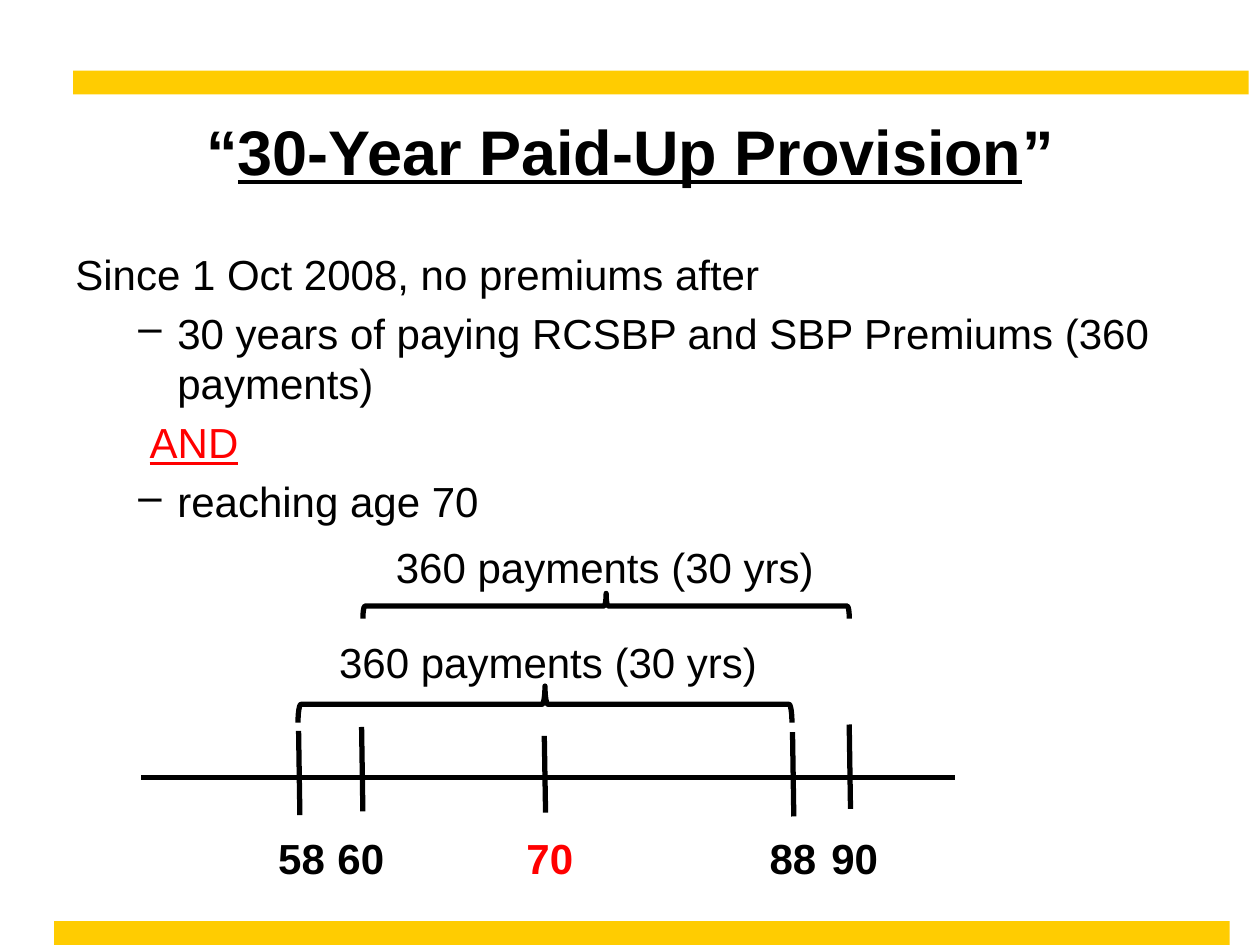
from lxml.etree import SubElement
from pptx import Presentation
from pptx.dml.color import RGBColor
from pptx.enum.shapes import MSO_CONNECTOR as Connector, MSO_SHAPE as Shape
from pptx.enum.text import MSO_ANCHOR as Anchor, PP_ALIGN as Align
from pptx.oxml.ns import qn
from pptx.util import Inches, Pt

COLORS = {"text": "000000", "accent": "FF0000", "bar": "FFCC01"}


class SlideBuilder:
    """Draws styled elements on the current slide."""

    def __init__(self, slide):
        self.slide = slide
        self.font_name = "Arial"
        self.line_width = Pt(3)

    def color(self, key):
        return RGBColor.from_string(COLORS[key])

    def bar(self, left, top):
        bar = self.slide.shapes.add_shape(
            Shape.RECTANGLE, Inches(left), Inches(top), Inches(9.33), Inches(0.19))
        bar.shadow.inherit = False
        bar.fill.solid()
        bar.fill.fore_color.rgb = self.color("bar")
        bar.line.fill.background()

    def box(self, left, top, width, height, wrap=True):
        frame = self.slide.shapes.add_textbox(
            Inches(left), Inches(top), Inches(width), Inches(height)).text_frame
        frame.word_wrap = wrap
        return frame

    def style(self, paragraph, size=24, color="text", bold=False, underline=None):
        font = paragraph.font
        font.name, font.size, font.bold = self.font_name, Pt(size), bold
        font.underline = underline
        font.color.rgb = self.color(color)

    def title(self, opening, underlined, closing):
        frame = self.box(0.5, 0.75, 9, 0.88)
        frame.vertical_anchor = Anchor.MIDDLE
        heading = frame.paragraphs[0]
        heading.alignment = Align.CENTER
        for text in (opening, underlined, closing):
            run = heading.add_run()
            run.text = text
            run.font.underline = text == underlined
        self.style(heading, size=36, bold=True)

    def body(self, items):
        frame = self.box(0.5, 1.92, 9, 4.91)
        for index, (text, margin, indent, bullet, look) in enumerate(items):
            item = frame.add_paragraph() if index else frame.paragraphs[0]
            item.text = text
            if index:
                item.level = 1
                item.space_before = Pt(5)
            properties = item._p.get_or_add_pPr()
            properties.set("marL", str(Inches(margin)))
            properties.set("indent", str(Inches(indent)))
            if bullet:
                SubElement(properties, qn("a:buChar")).set("char", bullet)
            else:
                SubElement(properties, qn("a:buNone"))
            self.style(item, **look)

    def label(self, text, left, top, width, align=Align.LEFT, **look):
        label = self.box(left, top, width, 0.5, wrap=False).paragraphs[0]
        label.text = text
        label.alignment = align
        self.style(label, **look)

    def line(self, x1, y1, x2, y2):
        line = self.slide.shapes.add_connector(
            Connector.STRAIGHT, Inches(x1), Inches(y1), Inches(x2), Inches(y2))
        line.line.color.rgb = self.color("text")
        line.line.width = self.line_width
        SubElement(line._element.spPr, qn("a:effectLst"))

    def brace(self, left, top, width, height):
        brace = self.slide.shapes.add_shape(
            Shape.LEFT_BRACE, Inches(left), Inches(top), Inches(width), Inches(height))
        brace.rotation = 90
        brace.adjustments[0] = 0.08
        brace.shadow.inherit = False
        brace.fill.background()
        brace.line.color.rgb = self.color("text")
        brace.line.width = self.line_width


def main():
    deck = Presentation()
    deck.slide_width, deck.slide_height = Inches(10), Inches(7.5)
    page = SlideBuilder(deck.slides.add_slide(deck.slide_layouts[6]))

    page.bar(0.58, 0.56)
    page.bar(0.43, 7.31)
    page.title("“", "30-Year Paid-Up Provision", "”")
    page.body([
        ("Since 1 Oct 2008, no premiums after", 0, 0, None, {}),
        ("30 years of paying RCSBP and SBP Premiums (360 payments)",
         0.81, -0.31, "–", {}),
        ("AND", 0.59, 0, None, {"color": "accent", "underline": True}),
        ("reaching age 70", 0.81, -0.31, "–", {}),
    ])

    page.brace(4.18, 3.63, 0.29, 3.92)
    page.brace(4.71, 2.88, 0.2, 3.86)
    for left, top in ((3.01, 4.25), (2.56, 5)):
        page.label("360 payments (30 yrs)", left, top, 3.58, Align.CENTER)

    page.line(1.12, 6.17, 7.58, 6.17)
    ages = [
        ("58", 2.11, 2.37, 5.8, 6.47, "text"),
        ("60", 2.58, 2.87, 5.77, 6.44, "text"),
        ("70", 4.08, 4.32, 5.84, 6.45, "accent"),
        ("88", 6.01, 6.29, 5.81, 6.48, "text"),
        ("90", 6.5, 6.74, 5.75, 6.42, "text"),
    ]
    for age, left, tick, top, bottom, color in ages:
        page.line(tick, top, tick + 0.01, bottom)
        page.label(age, left, 6.56, 0.58, color=color, bold=True)

    deck.save("out.pptx")


if __name__ == "__main__":
    main()
